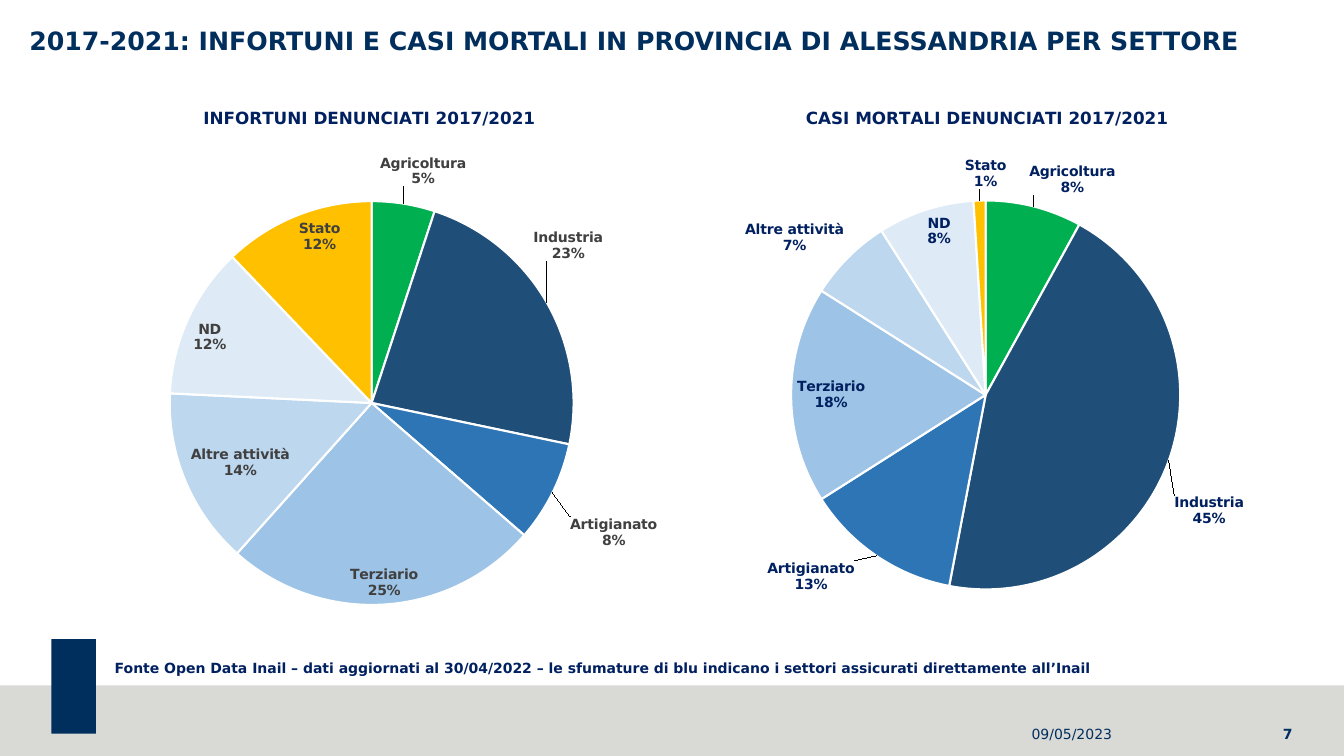
from lxml import etree
from pptx import Presentation
from pptx import util as u
from pptx.chart import data
from pptx.dml import color
from pptx.enum import chart as charts, shapes, text
from pptx.oxml import ns

COLOURS = {
    "navy": "002E5D", "ink": "002060", "grey": "404040", "band": "D9D9D6",
    "white": "FFFFFF", "black": "000000",
}
SECTORS = {
    "Agricoltura": "00B050", "Industria": "1F4E79", "Artigianato": "2E75B6",
    "Terziario": "9DC3E6", "Altre attività": "BDD7EE", "ND": "DEEBF7",
    "Stato": "FFC000",
}
INJURIES = {
    "title": "INFORTUNI DENUNCIATI 2017/2021",
    "values": [5, 23, 8, 25, 14, 12, 12],
    "label_colour": "grey",
    "title_at": {"x": 0.23, "y": 0.04},
    "plot_at": {"x": 0.18, "y": 0.22, "w": 0.66, "h": 0.75},
    "outside": {"Agricoltura": (-0.04, -0.02), "Industria": (-0.03, -0.07),
                "Artigianato": (0.02, 0.04)},
}
DEATHS = {
    "title": "CASI MORTALI DENUNCIATI 2017/2021",
    "values": [8, 45, 13, 18, 7, 8, 1],
    "label_colour": "ink",
    "title_at": {"x": 0.21, "y": 0.04},
    "plot_at": {"x": 0.19, "y": 0.22, "w": 0.63, "h": 0.72},
    "outside": {"Agricoltura": (-0.01, -0.01), "Industria": (0, 0.06),
                "Artigianato": (-0.03, 0), "Altre attività": (0, 0),
                "Stato": (0.01, -0.01)},
}


def paint(name):
    return color.RGBColor.from_string(COLOURS.get(name, name))


def assign(target, values):
    for name, value in values.items():
        setattr(target, name, value)


def layout(parent, index, values):
    for old in parent.findall(ns.qn("c:layout")):
        parent.remove(old)
    frame = etree.Element(ns.qn("c:layout"))
    manual = etree.SubElement(frame, ns.qn("c:manualLayout"))
    for name, value in values.items():
        etree.SubElement(manual, ns.qn("c:" + name)).set("val", str(value))
    parent.insert(index, frame)


def show_name_and_percent(labels):
    flags = {"showVal": "0", "showCatName": "1", "showPercent": "1"}
    for name, value in flags.items():
        labels.find(ns.qn("c:" + name)).set("val", value)
    separator = etree.Element(ns.qn("c:separator"))
    separator.text = "\n"
    labels.find(ns.qn("c:showBubbleSize")).addnext(separator)


class Page:
    COLUMNS = 100
    ROWS = 100
    FACE = "DejaVu Sans"
    EDGES = {"xMode": "edge", "yMode": "edge"}

    def __init__(self, deck):
        self.width, self.height = deck.slide_width, deck.slide_height
        self.page = deck.slides.add_slide(deck.slide_layouts[5])

    def grid(self, left, top, columns, rows):
        across, down = self.width / self.COLUMNS, self.height / self.ROWS
        return (int(left * across), int(top * down),
                int(columns * across), int(rows * down))

    def style(self, font, size, colour, bold=True):
        assign(font, {"name": self.FACE, "size": u.Pt(size), "bold": bold})
        font.color.rgb = paint(colour)

    def block(self, cells, colour):
        box = self.page.shapes.add_shape(
            shapes.MSO_SHAPE.RECTANGLE, *self.grid(*cells))
        box.shadow.inherit = False
        box.fill.solid()
        box.fill.fore_color.rgb = paint(colour)
        box.line.fill.background()

    def fill_text(self, box, words, size, colour, bold=True, anchor="TOP",
                  align="LEFT", inset=0):
        frame = box.text_frame
        assign(frame, {
            "word_wrap": True, "auto_size": text.MSO_AUTO_SIZE.NONE,
            "vertical_anchor": text.MSO_ANCHOR[anchor],
            "margin_left": u.Inches(inset), "margin_right": u.Inches(inset),
            "margin_top": u.Inches(inset / 2),
            "margin_bottom": u.Inches(inset / 2),
        })
        para = frame.paragraphs[0]
        para.alignment = text.PP_ALIGN[align]
        span = para.add_run()
        span.text = words
        self.style(span.font, size, colour, bold)
        return para

    def title(self, cells, words):
        box = self.page.shapes.title
        places = zip(("left", "top", "width", "height"), self.grid(*cells))
        assign(box, dict(places))
        self.fill_text(box, words, 18, "navy").line_spacing = 0.9

    def note(self, cells, words, **look):
        box = self.page.shapes.add_textbox(*self.grid(*cells))
        self.fill_text(box, words, 10, **look)

    def pie(self, cells, topic):
        figures = data.CategoryChartData()
        figures.categories = list(SECTORS)
        figures.add_series("Series 1", topic["values"])
        chart = self.page.shapes.add_chart(
            charts.XL_CHART_TYPE.PIE, *self.grid(*cells), figures).chart
        self.style(chart.font, 10, "black", False)
        chart.has_legend = False
        chart.has_title = True

        heading = chart.chart_title
        span = heading.text_frame.paragraphs[0].add_run()
        span.text = topic["title"]
        self.style(span.font, 12, "ink")
        layout(heading._element, 1, {**self.EDGES, **topic["title_at"]})
        plot_area = chart._chartSpace.chart.plotArea
        layout(plot_area, 0, {"layoutTarget": "inner", **self.EDGES,
                              **topic["plot_at"]})

        plot = chart.plots[0]
        plot.vary_by_categories = True
        series = plot.series[0]
        labels = series.data_labels
        assign(labels, {"number_format": "0%", "number_format_is_linked": False,
                        "position": charts.XL_LABEL_POSITION.INSIDE_END})
        self.style(labels.font, 10, topic["label_colour"])
        show_name_and_percent(labels._element)

        for index, (sector, colour) in enumerate(SECTORS.items()):
            point = series.points[index]
            point.format.fill.solid()
            point.format.fill.fore_color.rgb = paint(colour)
            point.format.line.color.rgb = paint("white")
            point.format.line.width = u.Pt(1.5)
            if sector in topic["outside"]:
                label = point.data_label
                label.position = charts.XL_LABEL_POSITION.OUTSIDE_END
                self.style(label.font, 10, topic["label_colour"])

        moved = labels._element.findall(ns.qn("c:dLbl"))
        for element, (across, down) in zip(moved, topic["outside"].values()):
            show_name_and_percent(element)
            if across or down:
                layout(element, 1, {"x": across, "y": down})


def main():
    deck = Presentation()
    deck.slide_width, deck.slide_height = u.Inches(13.33), u.Inches(7.5)
    page = Page(deck)
    page.block((0, 90.67, 100, 9.33), "band")
    page.block((3.83, 84.53, 3.3, 12.53), "navy")
    page.title((2.18, 3.73, 95.35, 10.13),
               "2017-2021: INFORTUNI E CASI MORTALI IN PROVINCIA "
               "DI ALESSANDRIA PER SETTORE")
    page.note((70.89, 94.4, 11.85, 5.33), "09/05/2023", colour="navy",
              bold=False, anchor="MIDDLE", align="RIGHT")
    page.note((84.25, 94.4, 11.93, 5.33), "7", colour="navy",
              anchor="MIDDLE", align="RIGHT")
    page.note((7.8, 86.53, 88.45, 3.6),
              "Fonte Open Data Inail – dati aggiornati al 30/04/2022 – "
              "le sfumature di blu indicano i settori assicurati "
              "direttamente all’Inail", colour="ink", inset=0.1)
    page.pie((4.43, 10.8, 45.54, 71.47), INJURIES)
    page.pie((50.04, 10.8, 46.14, 71.47), DEATHS)
    deck.save("out.pptx")


if __name__ == "__main__":
    main()
